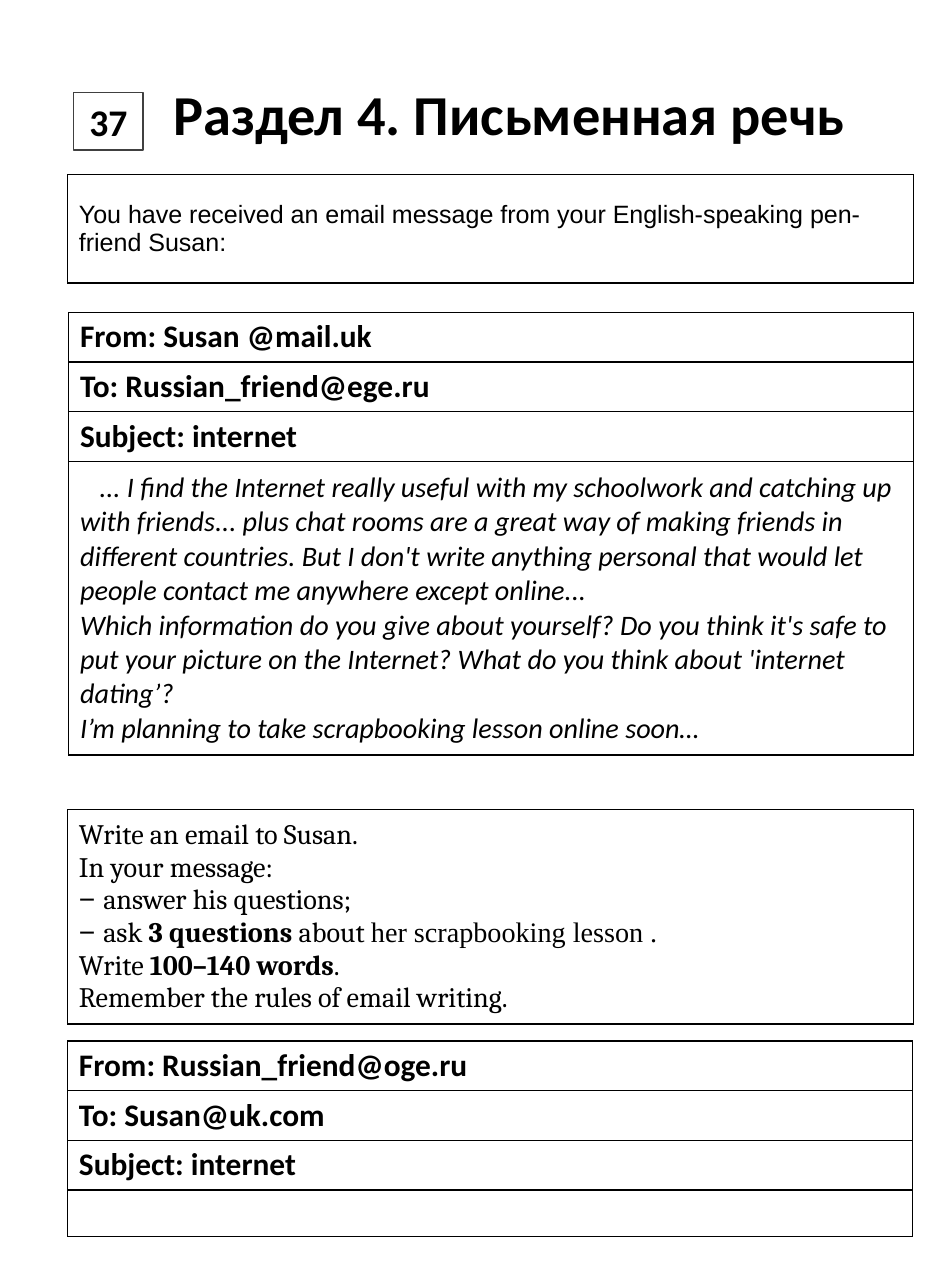
import pptx
import pptx.util
import pptx.dml.color
import pptx.enum.shapes
import pptx.enum.text
import pptx.oxml.ns
import lxml.etree

Inches, Pt = pptx.util.Inches, pptx.util.Pt
MIDDLE = pptx.enum.text.MSO_ANCHOR.MIDDLE
TOP = pptx.enum.text.MSO_ANCHOR.TOP
CENTER = pptx.enum.text.PP_ALIGN.CENTER

COLORS = {"ink": "000000", "paper": "FFFFFF", "frame": "404040"}

TASK_NUMBER = "37"
TITLE = "Раздел 4. Письменная речь"
INTRO = ["You have received an email message from your English-speaking pen-friend Susan:"]
RECEIVED_HEADER = ["From: Susan @mail.uk", "To: Russian_friend@ege.ru", "Subject: internet"]
RECEIVED_BODY = [
    "... I find the Internet really useful with my schoolwork and catching up with "
    "friends... plus chat rooms are a great way of making friends in different countries. "
    "But I don't write anything personal that would let people contact me anywhere "
    "except online...",
    "Which information do you give about yourself? Do you think it's safe to put your "
    "picture on the Internet? What do you think about 'internet dating’?",
    "I’m planning to take scrapbooking lesson online soon…",
]
DASH = ("− ", {"font": "Arial"})
TASK = [
    "Write an email to Susan.",
    "In your message:",
    [DASH, ("answer his questions;", {})],
    [DASH, ("ask ", {}), ("3 questions ", {"bold": True}), ("about ", {}),
     ("her scrapbooking lesson .", {"font": "Times New Roman"})],
    [("Write ", {}), ("100–140 words", {"bold": True}), (".", {})],
    "Remember the rules of email writing.",
]
REPLY_HEADER = ["From: Russian_friend@oge.ru", "To: Susan@uk.com", "Subject: internet"]

HEADER_FORMAT = {"size": 20, "bold": True}
HEADER_HEIGHT = 0.43


def color(name):
    return pptx.dml.color.RGBColor.from_string(COLORS[name])


def write(frame, paragraphs, size=18, font="Calibri", bold=False, italic=False,
          align=None, first_indent=0):
    """Fill a text frame; a paragraph is a string or a list of (text, format) spans."""
    for index, content in enumerate(paragraphs):
        para = frame.paragraphs[0] if index == 0 else frame.add_paragraph()
        para.alignment = align
        if first_indent and index == 0:
            para._p.get_or_add_pPr().set("indent", str(Inches(first_indent)))
        spans = [(content, {})] if isinstance(content, str) else content
        for text, change in spans:
            span = para.add_run()
            span.text = text
            span.font.size = Pt(size)
            span.font.name = change.get("font", font)
            span.font.bold = change.get("bold", bold)
            span.font.italic = italic
            span.font.color.rgb = color("ink")


def make_line(tag, width, color_name):
    line = lxml.etree.Element(pptx.oxml.ns.qn(tag), w=str(Pt(width)))
    fill = lxml.etree.SubElement(line, pptx.oxml.ns.qn("a:solidFill"))
    lxml.etree.SubElement(fill, pptx.oxml.ns.qn("a:srgbClr"), val=COLORS[color_name])
    return line


def add_framed_table(page, left, top, width, rows):
    """Add a one-column table; rows are (paragraphs, height, anchor, margin, format)."""
    heights = [row[1] for row in rows]
    table = page.shapes.add_table(len(rows), 1, Inches(left), Inches(top),
                                  Inches(width), Inches(sum(heights))).table
    table.first_row = table.horz_banding = False
    for index, (paragraphs, height, anchor, margin, style) in enumerate(rows):
        table.rows[index].height = Inches(height)
        cell = table.cell(index, 0)
        cell.vertical_anchor = anchor
        cell.margin_top = cell.margin_bottom = Inches(margin)
        cell.fill.background()
        write(cell.text_frame, paragraphs, **style)
        properties = cell._tc.get_or_add_tcPr()
        for place, side in enumerate("LRTB"):
            properties.insert(place, make_line("a:ln" + side, 1, "ink"))


def header_rows(lines):
    return [([line], HEADER_HEIGHT, TOP, 0.05, HEADER_FORMAT) for line in lines]


def add_number(page):
    box = page.shapes.add_shape(pptx.enum.shapes.MSO_SHAPE.RECTANGLE, Inches(0.65),
                                Inches(0.82), Inches(0.62), Inches(0.51))
    box.shadow.inherit = False
    box.fill.solid()
    box.fill.fore_color.rgb = color("paper")
    box.line.color.rgb = color("frame")
    box.line.width = Pt(1)
    box.text_frame.vertical_anchor = MIDDLE
    write(box.text_frame, [TASK_NUMBER], size=24, bold=True, align=CENTER)


def add_title(page):
    box = page.shapes.add_textbox(Inches(1.41), Inches(0.65), Inches(6.21), Inches(0.71))
    box.text_frame.word_wrap = False
    box.text_frame.auto_size = pptx.enum.text.MSO_AUTO_SIZE.SHAPE_TO_FIT_TEXT
    write(box.text_frame, [TITLE], size=36, bold=True, align=CENTER)
    span = box.text_frame.paragraphs[0].runs[0]
    span._r.get_or_add_rPr().insert(0, make_line("a:ln", 0.75, "paper"))


def main():
    deck = pptx.Presentation()
    deck.slide_width, deck.slide_height = Inches(8.27), Inches(11.42)
    page = deck.slides.add_slide(deck.slide_layouts[6])
    add_number(page)
    add_framed_table(page, 0.6, 1.55, 7.5,
                     [(INTRO, 0.96, MIDDLE, 0.05, {"size": 16, "font": "Arial"})])
    add_framed_table(page, 0.61, 2.77, 7.49, header_rows(RECEIVED_HEADER) + [
        (RECEIVED_BODY, 2.56, MIDDLE, 0.08, {"italic": True, "first_indent": 0.17})])
    add_framed_table(page, 0.6, 7.18, 7.5,
                     [(TASK, 1.9, MIDDLE, 0.05, {"font": "Cambria"})])
    add_framed_table(page, 0.6, 9.23, 7.49, header_rows(REPLY_HEADER) + [
        ([], 0.41, TOP, 0.05, {})])
    add_title(page)
    deck.save("out.pptx")


if __name__ == "__main__":
    main()
